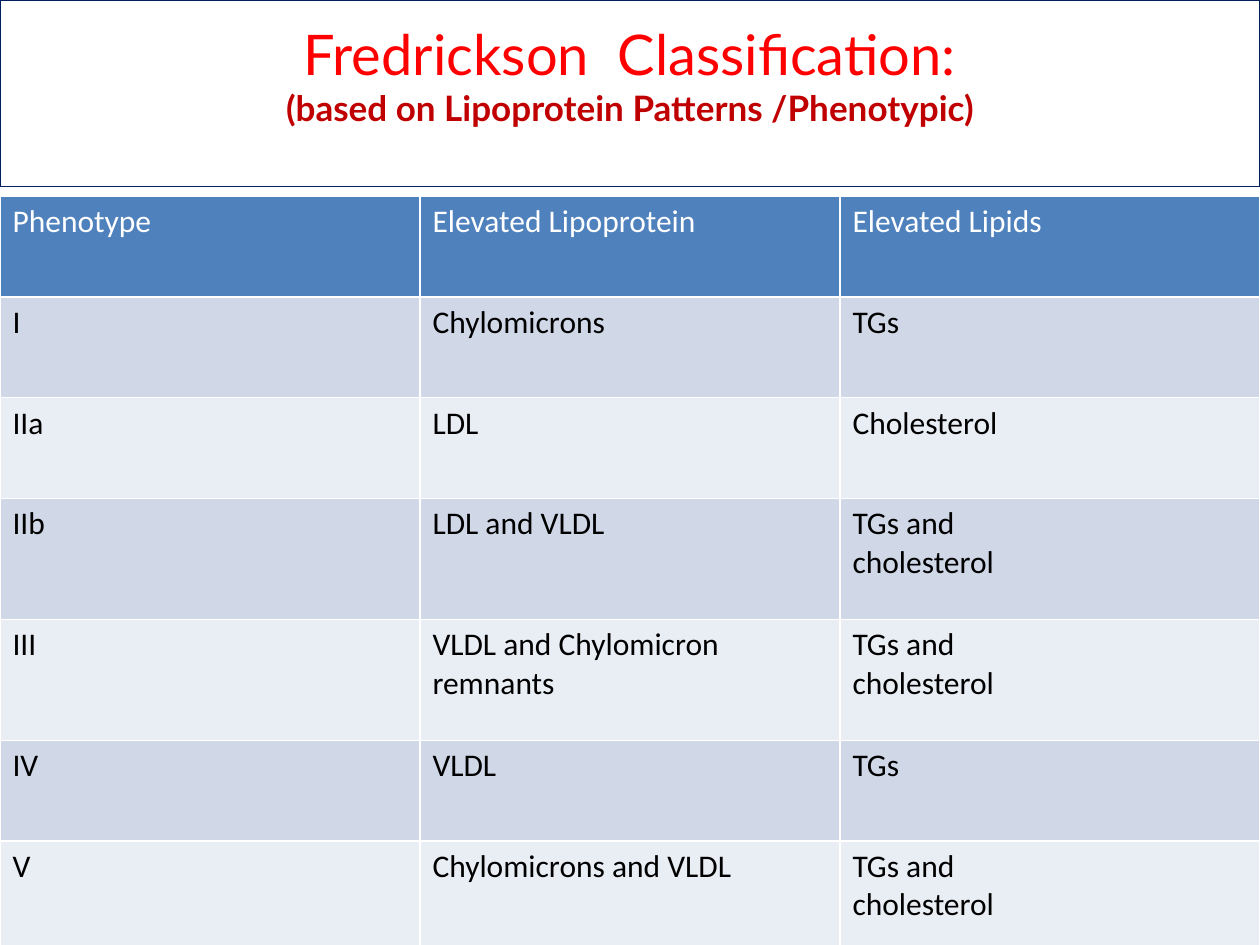
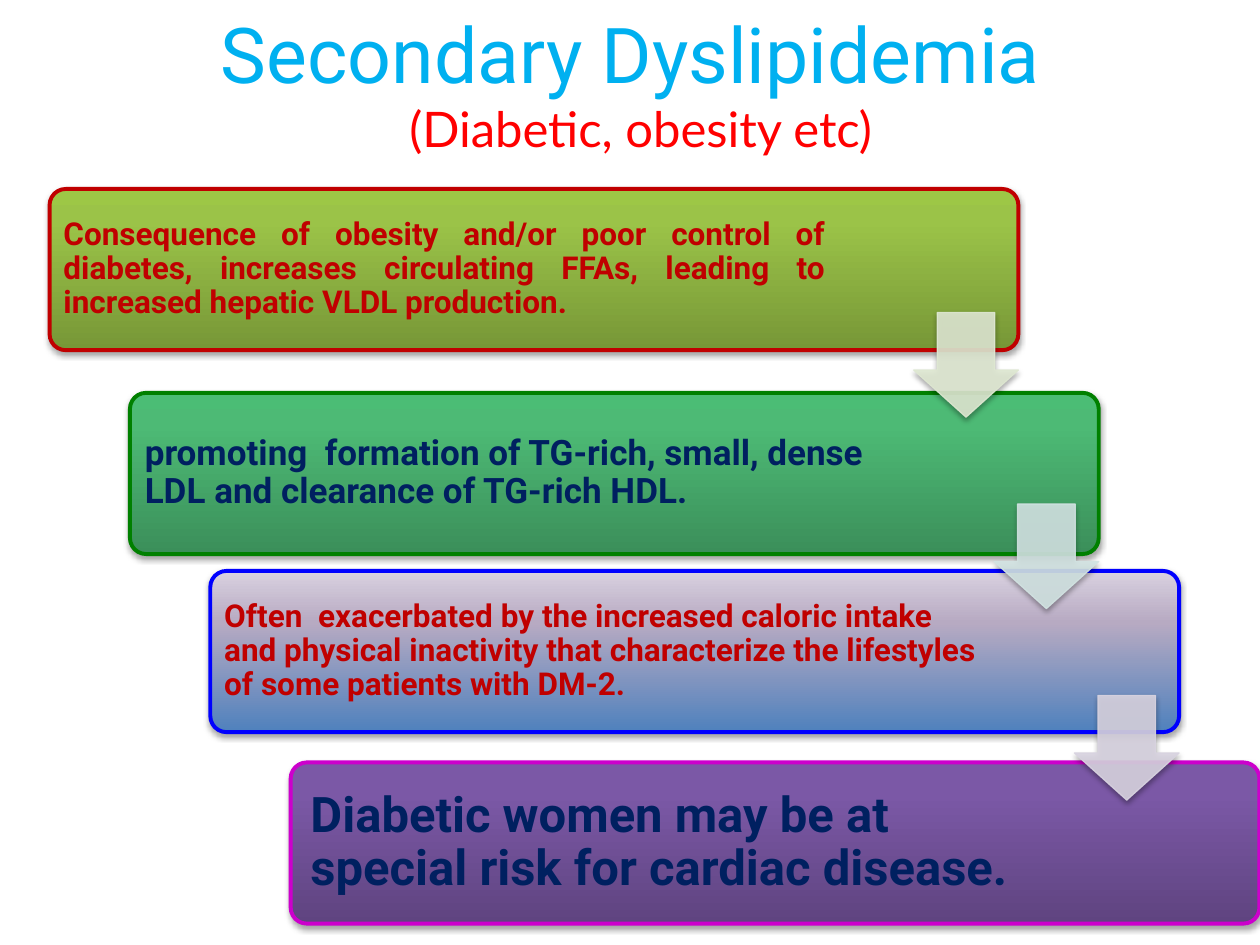
from copy import deepcopy

from lxml import etree
from pptx import Presentation
from pptx import util as u
from pptx.dml.color import RGBColor
from pptx.enum import shapes, text
from pptx.oxml.ns import qn

COLOURS = {
    "white": "FFFFFF", "black": "000000", "navy": "002060", "red": "FF0000",
    "crimson": "C00000", "sky": "00B0F0", "outline": "054697",
    "header": "4F81BD", "band_dark": "D0D8E8", "band_light": "E9EDF4",
    "green": "008000", "blue": "0000FF", "magenta": "CC00CC",
    "arrow_1": "DEE7D1", "arrow_2": "D2E3E2", "arrow_3": "D8D3E0",
}

FREDRICKSON_TITLE = [
    ("Fredrickson  Classification:", "red", {"size": u.Pt(32), "name": "Lato", "bold": False}),
    ("(based on Lipoprotein Patterns /Phenotypic)", "crimson",
     {"size": u.Pt(20), "name": "Lato", "bold": True}),
]
SECONDARY_TITLE = [
    ("Secondary Dyslipidemia ", "sky", {"size": u.Pt(44), "name": "Roboto"}),
    ("(Diabetic, obesity etc)", "red", {"size": u.Pt(28), "name": "Lato"}),
]
PHENOTYPES = [
    ("Phenotype", "Elevated Lipoprotein", "Elevated Lipids"),
    ("I", "Chylomicrons", "TGs"),
    ("IIa", "LDL", "Cholesterol"),
    ("IIb", "LDL and VLDL", "TGs and\ncholesterol"),
    ("III", "VLDL and Chylomicron remnants", "TGs and\ncholesterol"),
    ("IV", "VLDL", "TGs"),
    ("V", "Chylomicrons and VLDL", "TGs and\ncholesterol"),
]
ROW_HEIGHTS = [2.03, 2.03, 2.03, 2.44, 2.44, 2.03, 2.11]
STEPS = [
    {"words": "Consequence of obesity and/or poor control of diabetes, increases "
              "circulating FFAs, leading to increased hepatic VLDL production.",
     "top": 3.81, "width": 15.72, "inset": 0.18, "size": 18, "ink": "crimson",
     "edge": "crimson", "align": text.PP_ALIGN.JUSTIFY,
     "blend": [(0, "779737"), (0.8, "9BC348"), (1, "9DC746")]},
    {"words": "promoting  formation of TG-rich, small, dense LDL and clearance of "
              "TG-rich HDL.",
     "top": 7.92, "width": 15.57, "inset": 0.2, "size": 20, "ink": "navy",
     "edge": "green", "align": text.PP_ALIGN.LEFT,
     "blend": [(0, "3B8F5A"), (0.8, "4DBA75"), (1, "4BBD75")]},
    {"words": "Often  exacerbated by the increased caloric intake and physical "
              "inactivity that characterize the lifestyles of some patients with DM-2.",
     "top": 11.51, "width": 15.6, "inset": 0.18, "size": 18, "ink": "crimson",
     "edge": "blue", "align": text.PP_ALIGN.LEFT,
     "blend": [(0, "4F81BD"), (0.68, "B7AAC2"), (1, "D9D1E0")]},
    {"words": "Diabetic women may be at special risk for cardiac disease.",
     "top": 15.37, "width": 15.57, "inset": 0.3, "size": 28, "ink": "navy",
     "edge": "magenta", "align": text.PP_ALIGN.LEFT,
     "blend": [(0, "5F4480"), (0.8, "7B58A6"), (1, "7C57A8")]},
]
ARROW_COLOURS = ["arrow_1", "arrow_2", "arrow_3"]

STEP_LEFT, STEP_SHIFT, STEP_WIDTH, STEP_HEIGHT = 1, 1.62, 19.53, 3.25
ARROW_TOP, ARROW_SHIFT, ARROW_SIZE = 6.3, 3.86, 2.11
WORDS_GAP = 0.1


def rgb(name):
    return RGBColor.from_string(COLOURS[name])


def apply(target, formats):
    for name, value in formats.items():
        setattr(target, name, value)


def box(left, top, width, height):
    return [u.Cm(length) for length in (left, top, width, height)]


def add_titled_slide(deck, lines, place):
    slide = deck.slides.add_slide(deck.slide_layouts[5])
    title = slide.shapes.title
    apply(title, dict(zip(("left", "top", "width", "height"), box(*place))))
    apply(title.text_frame, {"word_wrap": True, "auto_size": text.MSO_AUTO_SIZE.NONE,
                             "vertical_anchor": text.MSO_ANCHOR.MIDDLE})
    paragraph = title.text_frame.paragraphs[0]
    paragraph.alignment = text.PP_ALIGN.CENTER
    for index, (words, colour, formats) in enumerate(lines):
        if index:
            paragraph.add_line_break()
        run = paragraph.add_run()
        run.text = words
        apply(run.font, formats)
        run.font.color.rgb = rgb(colour)
    return slide, title


def outline_words(run, colour):
    line = etree.Element(qn("a:ln"), w=str(u.Pt(1)))
    fill = etree.SubElement(line, qn("a:solidFill"))
    etree.SubElement(fill, qn("a:srgbClr"), val=COLOURS[colour])
    run.font._element.insert(0, line)


def add_shadow(shape):
    shape.shadow.inherit = False
    effects = shape._element.spPr.find(qn("a:effectLst"))
    shadow = etree.SubElement(effects, qn("a:outerShdw"), blurRad=str(u.Pt(3.1)),
                              dist=str(u.Pt(1.8)), dir="5400000", rotWithShape="0")
    colour = etree.SubElement(shadow, qn("a:srgbClr"), val=COLOURS["black"])
    etree.SubElement(colour, qn("a:alpha"), val="35000")


def fill_gradient(shape, blend):
    shape.fill.gradient()
    shape.fill.gradient_angle = 90
    stops = shape._element.spPr.find(".//" + qn("a:gsLst"))
    while len(stops) < len(blend):
        stops.append(deepcopy(stops[0]))
    for stop, (position, colour) in zip(shape.fill.gradient_stops, blend):
        stop.color.rgb = RGBColor.from_string(colour)
        stop.position = position


def add_step(slide, index, step):
    left = STEP_LEFT + index * STEP_SHIFT
    panel = slide.shapes.add_shape(shapes.MSO_SHAPE.ROUNDED_RECTANGLE,
                                   *box(left, step["top"], STEP_WIDTH, STEP_HEIGHT))
    panel.adjustments[0] = 0.1
    fill_gradient(panel, step["blend"])
    panel.line.color.rgb = rgb(step["edge"])
    panel.line.width = u.Pt(2.25)
    add_shadow(panel)

    frame = slide.shapes.add_textbox(*box(
        left + WORDS_GAP, step["top"] + WORDS_GAP,
        step["width"], STEP_HEIGHT - 2 * WORDS_GAP)).text_frame
    apply(frame, {"word_wrap": True, "vertical_anchor": text.MSO_ANCHOR.MIDDLE})
    apply(frame, {f"margin_{side}": u.Cm(step["inset"])
                  for side in ("left", "top", "right", "bottom")})
    paragraph = frame.paragraphs[0]
    apply(paragraph, {"text": step["words"], "alignment": step["align"],
                      "line_spacing": 0.9})
    font = paragraph.runs[0].font
    apply(font, {"name": "Roboto", "size": u.Pt(step["size"]), "bold": True})
    font.color.rgb = rgb(step["ink"])


def add_arrow(slide, index, colour):
    left = STEP_LEFT + index * STEP_SHIFT + STEP_WIDTH - ARROW_SIZE
    arrow = slide.shapes.add_shape(
        shapes.MSO_SHAPE.DOWN_ARROW,
        *box(left, ARROW_TOP + index * ARROW_SHIFT, ARROW_SIZE, ARROW_SIZE))
    arrow.adjustments[0], arrow.adjustments[1] = 0.55, 0.45
    arrow.fill.solid()
    arrow.fill.fore_color.rgb = rgb(colour)
    arrow.line.color.rgb = rgb(colour)
    arrow.line.width = u.Pt(0.75)
    for paint in arrow._element.spPr.iter(qn("a:srgbClr")):
        etree.SubElement(paint, qn("a:alpha"), val="90000")
    add_shadow(arrow)


def add_phenotypes(slide):
    table = slide.shapes.add_table(len(PHENOTYPES), len(PHENOTYPES[0]),
                                   *box(0, 3.96, 25.4, sum(ROW_HEIGHTS))).table
    for index, (row, height) in enumerate(zip(PHENOTYPES, ROW_HEIGHTS)):
        table.rows[index].height = u.Cm(height)
        band = "header" if index == 0 else "band_dark" if index % 2 else "band_light"
        for column, words in enumerate(row):
            cell = table.cell(index, column)
            cell.text = words
            cell.fill.solid()
            cell.fill.fore_color.rgb = rgb(band)
            for paragraph in cell.text_frame.paragraphs:
                font = paragraph.runs[0].font
                apply(font, {"name": "Calibri", "size": u.Pt(18), "bold": False})
                font.color.rgb = rgb("black" if index else "white")


def main():
    deck = Presentation()
    apply(deck, {"slide_width": u.Cm(25.4), "slide_height": u.Cm(19.05)})

    slide, title = add_titled_slide(deck, FREDRICKSON_TITLE, (0, 0, 25.4, 3.76))
    title.fill.solid()
    title.fill.fore_color.rgb = rgb("white")
    title.line.color.rgb = rgb("navy")
    title.line.width = u.Pt(1)
    title.text_frame.margin_bottom = u.Cm(0.9)
    outline_words(title.text_frame.paragraphs[0].runs[0], "outline")
    add_phenotypes(slide)

    slide, title = add_titled_slide(deck, SECONDARY_TITLE, (1.7, 0.76, 22.43, 1.78))
    for index, step in enumerate(STEPS):
        add_step(slide, index, step)
    for index, colour in enumerate(ARROW_COLOURS):
        add_arrow(slide, index, colour)

    deck.save("out.pptx")


if __name__ == "__main__":
    main()
